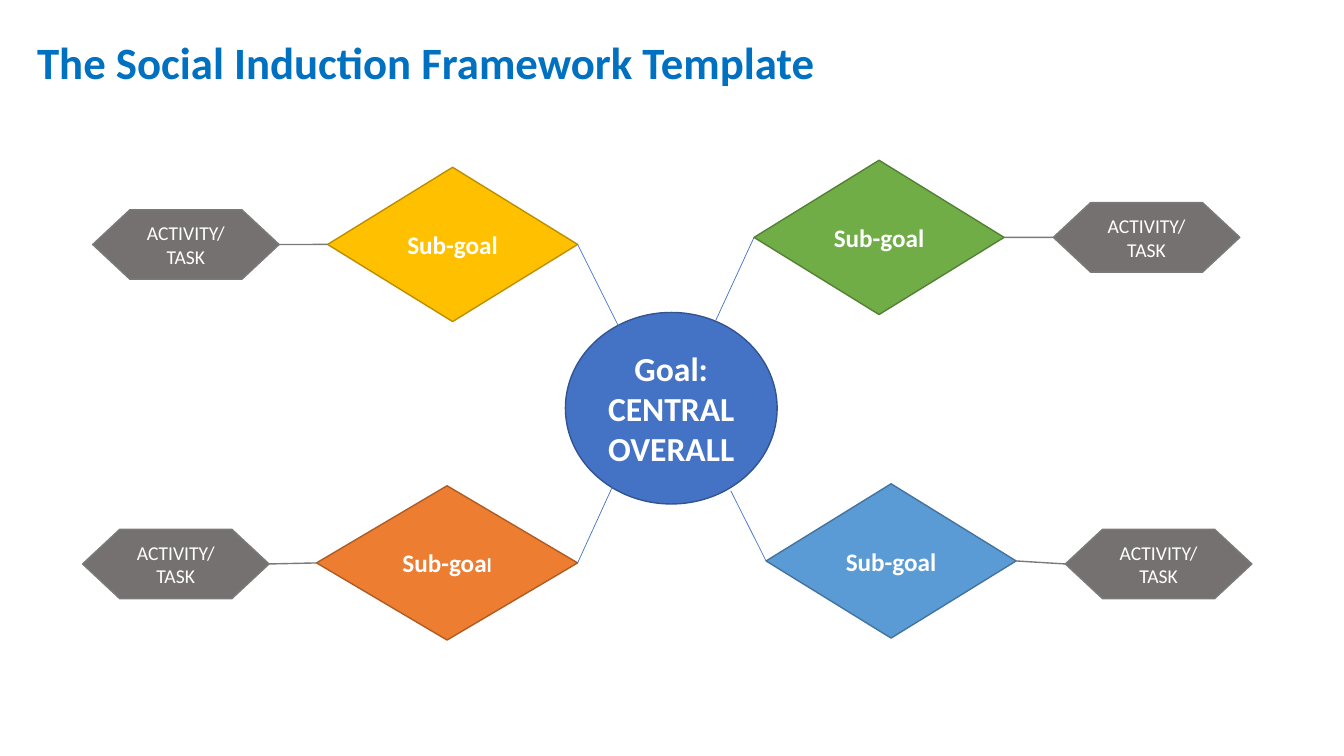
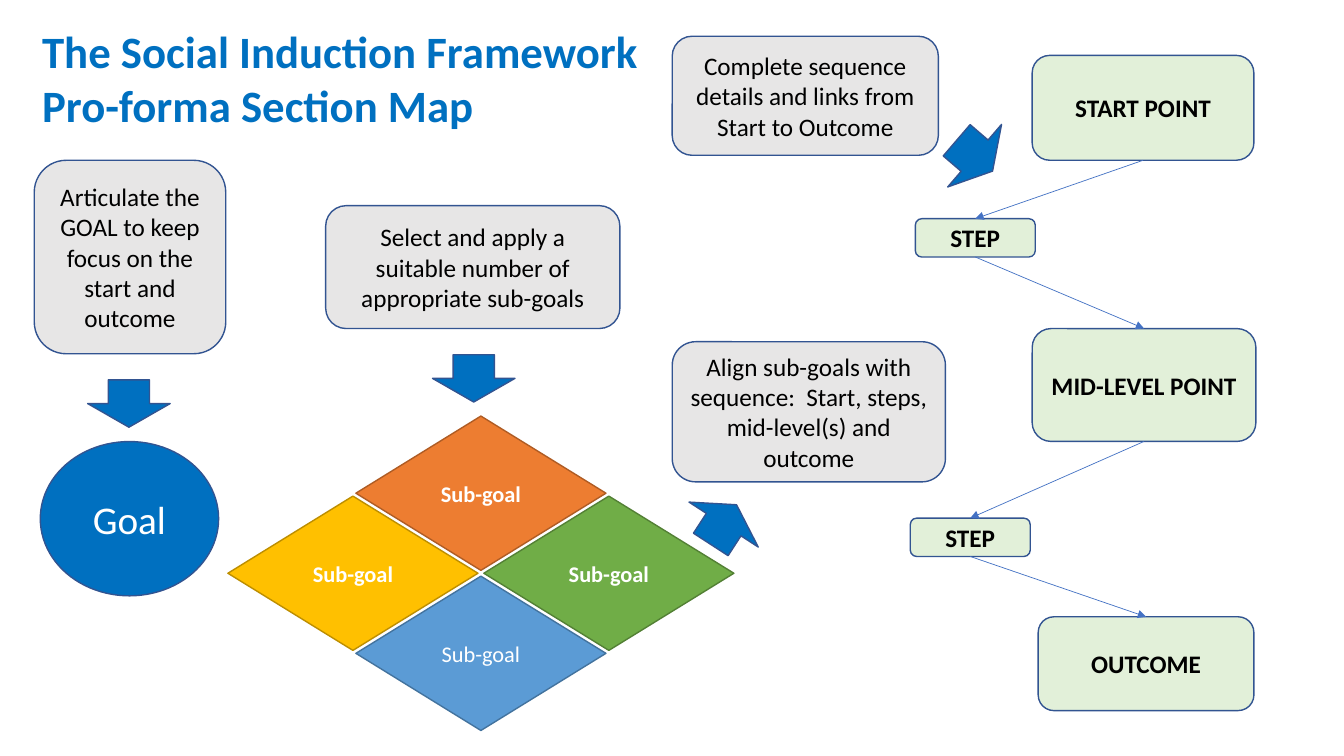
from lxml.etree import SubElement
from pptx import Presentation
from pptx.dml.color import RGBColor
from pptx.enum.shapes import MSO_CONNECTOR, MSO_SHAPE
from pptx.enum.text import MSO_ANCHOR, MSO_AUTO_SIZE, PP_ALIGN
from pptx.oxml.ns import qn
from pptx.util import Pt

FONT = "Calibri"
WHITE = RGBColor(0xFF, 0xFF, 0xFF)
BLACK = RGBColor(0x00, 0x00, 0x00)
BRAND = RGBColor(0x00, 0x70, 0xC0)
NAVY = RGBColor(0x32, 0x54, 0x91)
ROYAL = RGBColor(0x44, 0x72, 0xC4)
MINT = RGBColor(0xE2, 0xF0, 0xD9)
PALE = RGBColor(0xE7, 0xE6, 0xE6)
STONE = RGBColor(0x76, 0x71, 0x71)
GRAY = RGBColor(0x7A, 0x7A, 0x7A)
# Fill and outline of each sub-goal
GOLD = RGBColor(0xFF, 0xC0, 0x00), RGBColor(0xBD, 0x8E, 0x00)
GREEN = RGBColor(0x70, 0xAD, 0x47), RGBColor(0x53, 0x80, 0x35)
SKY = RGBColor(0x5B, 0x9B, 0xD5), RGBColor(0x43, 0x73, 0x9E)
RUST = RGBColor(0xED, 0x7D, 0x31), RGBColor(0xAF, 0x5C, 0x24)

TOP, LEFT, BOTTOM, RIGHT = range(4)
DIAMOND_W, DIAMOND_H = 178.6, 110.2
TASK_W, TASK_H = 133.2, 49.7
ARROW_W, ARROW_H = 59, 33.8

# Slide 1: colours, sub-goal box, task corner, side facing the goal, spot on its edge
BRANCHES = [
    (GOLD, (234, 119.5, DIAMOND_W), (66.2, 149.8), RIGHT, (442, 233.3)),
    (GREEN, (538.6, 114.5, DIAMOND_W), (752.4, 144.7), LEFT, (511.2, 229)),
    (SKY, (547.2, 345.6, DIAMOND_W), (761, 378), LEFT, (522, 350.6)),
    (RUST, (226.1, 347, 186.5), (59, 378), RIGHT, (437.8, 347)),
]

# Slide 2
STAGES = [
    ("START POINT", (737.3, 39.6, 158.4, 74.9)),
    ("STEP", (653.8, 156.2, 85.7, 27.4)),
    ("MID-LEVEL POINT", (737.3, 234.7, 159.8, 80.6)),
    ("STEP", (650.2, 370.1, 85.7, 27.4)),
    ("OUTCOME", (741.6, 440.6, 154.1, 67)),
]
NOTES = [
    ("Articulate the GOAL to keep focus on the start and outcome",
     (24.5, 114.5, 136.8, 138.2)),
    ("Select and apply a suitable number of appropriate sub-goals",
     (232.6, 146.9, 210.2, 87.8)),
    ("Complete sequence details and links from Start to Outcome",
     (480.2, 25.9, 190.1, 85)),
    ("Align sub-goals with sequence:  Start, steps, mid-level(s) and outcome",
     (480.2, 244.1, 195.1, 100.1)),
]
ARROWS = [(62.6, 271.4, 0), (308.9, 253.4, 0),
          (487.4, 357.8, 213), (666.7, 94.3, 310.7)]
# Colours, column and row step from the centre, bold
CLUSTER = [(GOLD, -1, 0, True), (GREEN, 1, 0, True),
           (SKY, 0, 1, False), (RUST, 0, -1, True)]
CLUSTER_X, CLUSTER_Y = 254.2, 354.4
STEP_X, STEP_Y = 91.4, 57.2


def style(frame, size, color, bold, align):
    for para in frame.paragraphs:
        para.alignment = align
        font = para.font
        font.name, font.size, font.bold = FONT, Pt(size), bold
        font.color.rgb = color


def add_title(slide, text, box):
    frame = slide.shapes.add_textbox(*map(Pt, box)).text_frame
    frame.text = text
    frame.word_wrap = False
    frame.auto_size = MSO_AUTO_SIZE.SHAPE_TO_FIT_TEXT
    style(frame, 32, BRAND, True, PP_ALIGN.LEFT)


def add_box(slide, kind, box, fill, line, text="", size=18, color=WHITE, bold=False):
    shape = slide.shapes.add_shape(kind, *map(Pt, box))
    shape.shadow.inherit = False
    shape.fill.solid()
    shape.fill.fore_color.rgb = fill
    shape.line.color.rgb = line
    shape.line.width = Pt(1)
    if text:
        frame = shape.text_frame
        frame.text = text
        frame.word_wrap = True
        frame.vertical_anchor = MSO_ANCHOR.MIDDLE
        style(frame, size, color, bold, PP_ALIGN.CENTER)
    return shape


def add_link(slide, start, side, end, color, width, goal=None, arrow=False):
    """Join a side of start to a side of shape end, or to the point goal."""
    x, y = map(Pt, goal or (0, 0))
    link = slide.shapes.add_connector(MSO_CONNECTOR.STRAIGHT, x, y, x, y)
    link.begin_connect(start, side)
    if end:
        link.end_connect(*end)
    link.line.color.rgb = color
    link.line.width = Pt(width)
    if arrow:
        SubElement(link.line._get_or_add_ln(), qn("a:tailEnd"), type="triangle")
    SubElement(link._element.spPr, qn("a:effectLst"))


def build_template(slide):
    add_title(slide, "The Social Induction Framework Template",
              (19.4, 21.6, 575.3, 46.1))
    add_box(slide, MSO_SHAPE.OVAL, (403.9, 223.2, 151.2, 136.8), ROYAL, NAVY,
            "Goal:\nCENTRAL OVERALL", 24, bold=True)
    for colors, box, corner, side, spot in BRANCHES:
        label = "Sub-goa" if colors == RUST else "Sub-goal"
        sub = add_box(slide, MSO_SHAPE.DIAMOND, (*box, DIAMOND_H), *colors,
                      label, bold=True)
        if colors == RUST:
            last = sub.text_frame.paragraphs[0].add_run()
            last.text = "l"
            last.font.size = Pt(14)
        task = add_box(slide, MSO_SHAPE.FLOWCHART_PREPARATION,
                       (*corner, TASK_W, TASK_H), STONE, GRAY,
                       "ACTIVITY/ TASK", 14)
        outer = LEFT if side == RIGHT else RIGHT
        add_link(slide, sub, side, None, ROYAL, 0.5, goal=spot)
        add_link(slide, sub, outer, (task, side), GRAY, 1)


def build_map(slide):
    add_title(slide, "The Social Induction Framework\nPro-forma Section Map",
              (23, 13.7, 444.2, 85))
    stages = [add_box(slide, MSO_SHAPE.ROUNDED_RECTANGLE, box, MINT, NAVY,
                      text, 18, BLACK, True) for text, box in STAGES]
    for start, end in zip(stages, stages[1:]):
        add_link(slide, start, BOTTOM, (end, TOP), ROYAL, 0.5, arrow=True)
    add_box(slide, MSO_SHAPE.OVAL, (28.8, 315.4, 127.4, DIAMOND_H), BRAND, NAVY,
            "Goal", 28)
    for colors, col, row, bold in CLUSTER:
        box = (CLUSTER_X + col * STEP_X, CLUSTER_Y + row * STEP_Y,
               DIAMOND_W, DIAMOND_H)
        add_box(slide, MSO_SHAPE.DIAMOND, box, *colors, "Sub-goal", 16, bold=bold)
    for text, box in NOTES:
        add_box(slide, MSO_SHAPE.ROUNDED_RECTANGLE, box, PALE, NAVY, text, 18, BLACK)
    for x, y, turn in ARROWS:
        arrow = add_box(slide, MSO_SHAPE.DOWN_ARROW, (x, y, ARROW_W, ARROW_H),
                        BRAND, NAVY)
        arrow.rotation = turn


def main():
    deck = Presentation()
    deck.slide_width, deck.slide_height = Pt(960), Pt(540)
    for build in (build_template, build_map):
        build(deck.slides.add_slide(deck.slide_layouts[6]))
    deck.save("out.pptx")


if __name__ == "__main__":
    main()
